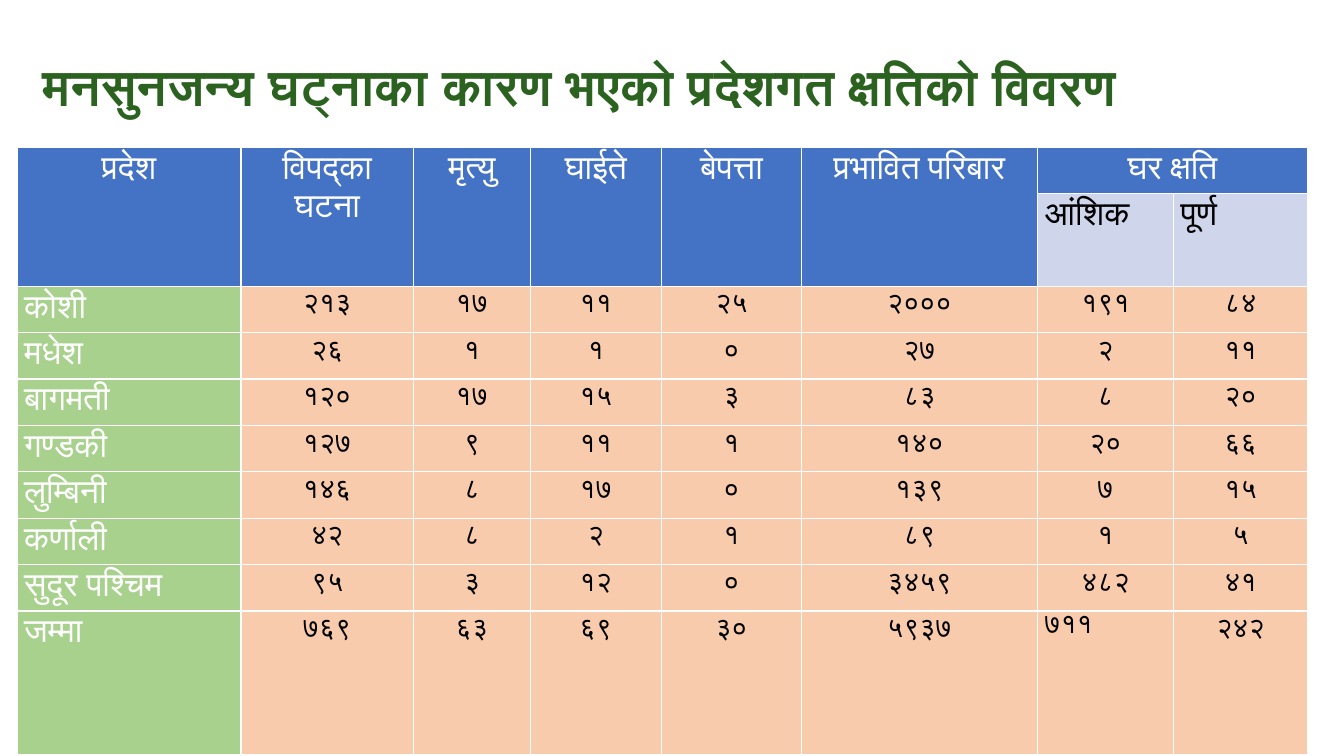
"""Build a slide tabulating monsoon damage by province."""
from dataclasses import dataclass
from typing import Any

from pptx import Presentation
from pptx import util as u
from pptx.dml.color import RGBColor
from pptx.enum import text


@dataclass(frozen=True)
class Theme:
    font: str = "Calibri"
    white: str = "FFFFFF"
    black: str = "000000"
    title: str = "2C6220"
    header: str = "4472C4"
    subheader: str = "CFD5EA"
    province: str = "A9D18E"
    figure: str = "F8CBAD"
    title_size: int = 36
    label_size: int = 24
    figure_size: int = 20


@dataclass(frozen=True)
class CellStyle:
    fill: str
    color: str
    size: int
    alignment: Any
    line_spacing: float | None = 1.15


THEME = Theme()
ALIGN = text.PP_ALIGN
HEADER = CellStyle(THEME.header, THEME.white, THEME.label_size, ALIGN.CENTER)
SUBHEADER = CellStyle(THEME.subheader, THEME.black, THEME.label_size, ALIGN.JUSTIFY)
PROVINCE = CellStyle(THEME.province, THEME.white, THEME.label_size, ALIGN.JUSTIFY)
FIGURE = CellStyle(THEME.figure, THEME.black, THEME.figure_size, ALIGN.CENTER)
PARTIAL_TOTAL = CellStyle(THEME.figure, THEME.black, THEME.figure_size, ALIGN.LEFT, None)

TITLE = "मनसुनजन्य घट्नाका कारण भएको प्रदेशगत क्षतिको विवरण"
HEADINGS = ("प्रदेश", "विपद्का घटना", "मृत्यु", "घाईते", "बेपत्ता", "प्रभावित परिबार", "घर क्षति")
HOUSE_DAMAGE = ("आंशिक", "पूर्ण")
HOUSE_COLUMN = len(HEADINGS) - 1
PROVINCES = (
    ("कोशी", "२१३", "१७", "११", "२५", "२०००", "१९१", "८४"),
    ("मधेश", "२६", "१", "१", "०", "२७", "२", "११"),
    ("बागमती", "१२०", "१७", "१५", "३", "८३", "८", "२०"),
    ("गण्डकी", "१२७", "९", "११", "१", "१४०", "२०", "६६"),
    ("लुम्बिनी", "१४६", "८", "१७", "०", "१३९", "७", "१५"),
    ("कर्णाली", "४२", "८", "२", "१", "८९", "१", "५"),
    ("सुदूर पश्चिम", "९५", "३", "१२", "०", "३४५९", "४८२", "४१"),
    ("जम्मा", "७६९", "६३", "६९", "३०", "५९३७", "७११", "२४२"),
)
COLUMN_WIDTHS = (2.22, 1.71, 1.16, 1.3, 1.39, 2.34, 1.35, 1.33)
ROW_HEIGHTS = (0.46, 0.92, *[0.46] * (len(PROVINCES) - 1), 1.42)


def apply_format(target: Any, values: dict[str, Any]) -> None:
    """Set each named attribute on the target."""
    for name, value in values.items():
        setattr(target, name, value)


def format_font(font: Any, size: int, color: str, bold: bool) -> None:
    """Give a font the theme face with a size, colour and weight."""
    apply_format(font, {"name": THEME.font, "size": u.Pt(size), "bold": bold})
    font.color.rgb = RGBColor.from_string(color)


def write_cell(cell: Any, content: str, style: CellStyle) -> None:
    """Fill a table cell with styled text."""
    apply_format(cell, {
        "text": content,
        "margin_left": u.Inches(0.07),
        "margin_right": u.Inches(0.07),
        "margin_top": 0,
        "margin_bottom": 0,
    })
    cell.fill.solid()
    cell.fill.fore_color.rgb = RGBColor.from_string(style.fill)
    paragraph = cell.text_frame.paragraphs[0]
    apply_format(paragraph, {"alignment": style.alignment, "line_spacing": style.line_spacing})
    format_font(paragraph.runs[0].font, style.size, style.color, False)


def add_title(slide: Any) -> None:
    """Place and format the slide title."""
    title = slide.shapes.title
    apply_format(title, {
        "left": u.Inches(0.32), "top": u.Inches(0.5),
        "width": u.Inches(12.53), "height": u.Inches(0.71),
    })
    apply_format(title.text_frame, {
        "text": TITLE,
        "word_wrap": True,
        "vertical_anchor": text.MSO_ANCHOR.TOP,
        "auto_size": text.MSO_AUTO_SIZE.SHAPE_TO_FIT_TEXT,
    })
    paragraph = title.text_frame.paragraphs[0]
    paragraph.alignment = ALIGN.LEFT
    format_font(paragraph.runs[0].font, THEME.title_size, THEME.title, True)


def add_damage_table(slide: Any) -> None:
    """Add the table of damage by province."""
    table = slide.shapes.add_table(
        len(ROW_HEIGHTS), len(COLUMN_WIDTHS), u.Inches(0.17), u.Inches(1.46),
        u.Inches(sum(COLUMN_WIDTHS)), u.Inches(sum(ROW_HEIGHTS)),
    ).table
    table.horz_banding = False
    for column, width in zip(table.columns, COLUMN_WIDTHS):
        column.width = u.Inches(width)
    for row, height in zip(table.rows, ROW_HEIGHTS):
        row.height = u.Inches(height)

    for index, heading in enumerate(HEADINGS):
        cell = table.cell(0, index)
        end = (0, index + 1) if index == HOUSE_COLUMN else (1, index)
        cell.merge(table.cell(*end))
        write_cell(cell, heading, HEADER)
    for index, label in enumerate(HOUSE_DAMAGE, HOUSE_COLUMN):
        write_cell(table.cell(1, index), label, SUBHEADER)

    last_row = len(ROW_HEIGHTS) - 1
    for row_index, province in enumerate(PROVINCES, 2):
        for index, content in enumerate(province):
            style = PROVINCE if index == 0 else FIGURE
            if (row_index, index) == (last_row, HOUSE_COLUMN):
                style = PARTIAL_TOTAL
            write_cell(table.cell(row_index, index), content, style)


def main() -> None:
    """Create and save the presentation."""
    presentation = Presentation()
    apply_format(presentation, {"slide_width": u.Inches(13.33), "slide_height": u.Inches(7.5)})
    slide = presentation.slides.add_slide(presentation.slide_layouts[5])
    add_title(slide)
    add_damage_table(slide)
    presentation.save("out.pptx")


if __name__ == "__main__":
    main()
